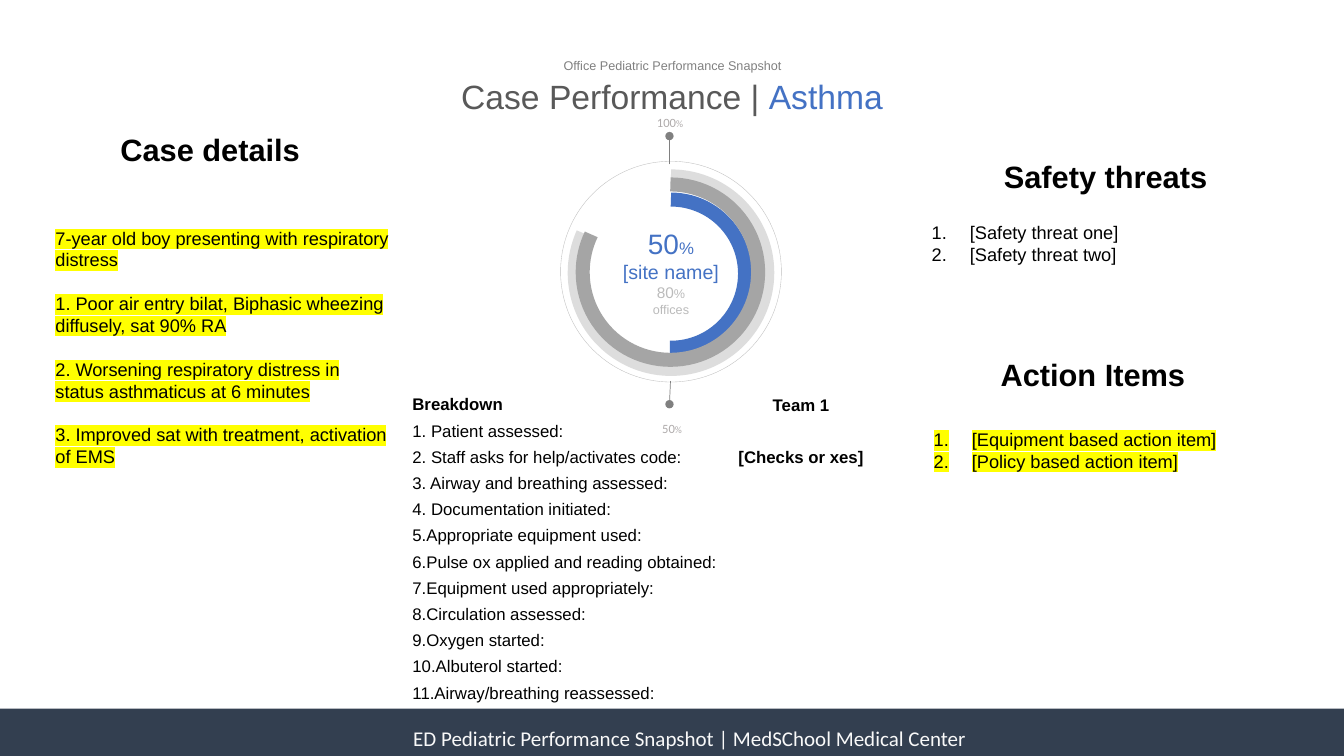
import dataclasses

import lxml.etree
import pptx
import pptx.dml.color
import pptx.enum.shapes
import pptx.enum.text
import pptx.oxml.ns
import pptx.util

Inches = pptx.util.Inches
Pt = pptx.util.Pt
ALIGN = pptx.enum.text.PP_ALIGN
ANCHOR = pptx.enum.text.MSO_ANCHOR
SHAPE = pptx.enum.shapes.MSO_SHAPE


@dataclasses.dataclass(frozen=True)
class Theme:
    font: str = "Arial"
    footer_font: str = "Calibri"
    title: float = 24
    heading: float = 22
    lead: float = 20
    footer: float = 15
    site: float = 14
    text: float = 13
    small: float = 12
    office: float = 11
    label: float = 9
    tiny: float = 7
    ink: str = "000000"
    dark: str = "595959"
    grey: str = "808080"
    accent: str = "4472C4"
    bar: str = "333F50"
    bar_text: str = "F9F9F9"
    ring: str = "BFBFBF"
    track: str = "DDDDDD"
    offices: str = "A5A5A5"
    office_text: str = "BBBBBB"
    scale_text: str = "AFABAB"
    marker: str = "FFFF00"


def rgb(value):
    return pptx.dml.color.RGBColor.from_string(value)


def set_values(target, values):
    for name, value in values.items():
        setattr(target, name, value)


def add_xml(parent, tag, **attributes):
    return lxml.etree.SubElement(parent, pptx.oxml.ns.qn(tag), attributes)


class SlideBuilder:
    def __init__(self, page, theme):
        self.page = page
        self.theme = theme

    def set_text(self, box, paras, align=ALIGN.LEFT, wrap=True, anchor=ANCHOR.TOP, inset=None):
        """Each para is (spans, format values, number indent or None)."""
        frame = box.text_frame
        set_values(frame, {"auto_size": pptx.enum.text.MSO_AUTO_SIZE.NONE,
                           "word_wrap": wrap, "vertical_anchor": anchor})
        if inset is not None:
            set_values(frame, {f"margin_{side}": Inches(inset)
                               for side in ("left", "top", "right", "bottom")})
        for index, (spans, values, indent) in enumerate(paras):
            para = frame.paragraphs[0] if index == 0 else frame.add_paragraph()
            set_values(para, {"alignment": align, "line_spacing": 1.0,
                              "space_before": Pt(0), "space_after": Pt(0), **values})
            self.number(para, indent)
            for span in spans:
                self.span(para, *span)

    def number(self, para, indent):
        props = para._p.get_or_add_pPr()
        offset = Inches(indent or 0)
        props.set("marL", str(offset))
        props.set("indent", str(-offset))
        if indent is None:
            add_xml(props, "a:buNone")
        else:
            add_xml(props, "a:buFont", typeface="+mj-lt")
            add_xml(props, "a:buAutoNum", type="arabicPeriod")

    def span(self, para, text, size, color, bold=False, font=None, marker=None):
        run = para.add_run()
        run.text = text
        set_values(run.font, {"size": Pt(size), "bold": bold, "name": font or self.theme.font})
        run.font.color.rgb = rgb(color)
        if marker:
            highlight = add_xml(run._r.rPr, "a:highlight")
            add_xml(highlight, "a:srgbClr", val=marker)
            run._r.rPr.find(pptx.oxml.ns.qn("a:solidFill")).addnext(highlight)

    def placeholder(self, index, at, paras, **layout):
        box = self.page.placeholders[index]
        set_values(box, dict(zip(("left", "top", "width", "height"), map(Inches, at))))
        self.set_text(box, paras, **layout)

    def text(self, at, paras, **layout):
        self.set_text(self.page.shapes.add_textbox(*map(Inches, at)), paras, **layout)

    def heading(self, at, text):
        spans = [(text, self.theme.heading, self.theme.ink, True)]
        self.text(at, [(spans, {}, None)], align=ALIGN.CENTER, wrap=False)

    def shape(self, kind, at, fill=None, line=None, width=0, angles=()):
        shape = self.page.shapes.add_shape(kind, *map(Inches, at))
        shape.shadow.inherit = False
        for index, angle in enumerate(angles):
            shape.adjustments[index] = angle
        if fill:
            shape.fill.solid()
            shape.fill.fore_color.rgb = rgb(fill)
        else:
            shape.fill.background()
        if line:
            shape.line.color.rgb = rgb(line)
            shape.line.width = Pt(width)
        else:
            shape.line.fill.background()
        return shape

    def pin(self, start, end):
        pin = self.page.shapes.add_connector(
            pptx.enum.shapes.MSO_CONNECTOR.STRAIGHT, *map(Inches, start + end))
        pin.line.color.rgb = rgb(self.theme.grey)
        pin.line.width = Pt(0.5)
        props = pin._element.spPr
        add_xml(props.find(pptx.oxml.ns.qn("a:ln")), "a:tailEnd", type="oval")
        add_xml(props, "a:effectLst")

    def scale_label(self, at, number):
        style = (self.theme.scale_text, False, self.theme.footer_font)
        spans = [(number, self.theme.label, *style), ("%", self.theme.tiny, *style)]
        self.text(at, [(spans, {}, None)], align=ALIGN.CENTER, anchor=ANCHOR.MIDDLE, inset=0)


def main():
    theme = Theme()
    deck = pptx.Presentation()
    deck.slide_width, deck.slide_height = Inches(13.33), Inches(7.5)
    page = deck.slides.add_slide(deck.slide_layouts.get_by_name("Comparison"))
    build = SlideBuilder(page, theme)

    # Footer bar
    build.shape(SHAPE.RECTANGLE, (0, 7.03, 13.33, 0.47), fill=theme.bar)
    footer = ("ED Pediatric Performance Snapshot | MedSChool Medical Center",
              theme.footer, theme.bar_text, False, theme.footer_font)
    build.text((4, 7.15, 6.33, 0.35), [([footer], {}, None)], wrap=False)

    # Title
    title = [("Case Performance | ", theme.title, theme.dark),
             ("Asthma", theme.title, theme.accent)]
    build.placeholder(0, (4.46, 0.7, 4.41, 0.5), [(title, {}, None)],
                      align=ALIGN.CENTER, wrap=False)
    kicker = ("Office Pediatric Performance Snapshot", theme.label, theme.grey)
    build.text((5.48, 0.53, 2.38, 0.25), [([kicker], {}, None)],
               align=ALIGN.CENTER, wrap=False)

    # Performance dial: 12 o'clock start, sweep ends in units of 100000
    for at, end, color in (((5.92, 1.98, 1.47, 1.47), 54.54, theme.accent),
                           ((5.7, 1.75, 1.91, 1.91), 122.57, theme.track),
                           ((5.78, 1.83, 1.74, 1.74), 123.3, theme.offices)):
        build.shape(SHAPE.ARC, at, line=color, width=10, angles=(162, end))
    dial = build.shape(SHAPE.OVAL, (5.56, 1.6, 2.19, 2.19), line=theme.ring, width=0.25)
    readings = [
        [("50", theme.lead, theme.accent), ("%", theme.small, theme.accent)],
        [("[site name]", theme.site, theme.accent)],
        [("80", theme.office, theme.office_text), ("%", theme.label, theme.office_text)],
        [("offices", theme.label, theme.office_text)],
    ]
    build.set_text(dial, [(spans, {}, None) for spans in readings],
                   align=ALIGN.CENTER, anchor=ANCHOR.MIDDLE)
    build.pin((6.64, 1.63), (6.64, 1.35))
    build.pin((6.65, 3.78), (6.64, 4.01))
    build.scale_label((6.32, 1.05, 0.65, 0.34), "100")
    build.scale_label((6.34, 4.08, 0.65, 0.34), "50")

    # Breakdown and team result
    steps = [" Patient assessed:", " Staff asks for help/activates code:",
             " Airway and breathing assessed:", " Documentation initiated:",
             "Appropriate equipment used:", "Pulse ox applied and reading obtained:",
             "Equipment used appropriately:", "Circulation assessed:",
             "Oxygen started:", "Albuterol started:", "Airway/breathing reassessed:"]
    loose = {"line_spacing": 1.3}
    paras = [([("Breakdown", theme.small, theme.ink, True)], {}, None)]
    paras += [([(step, theme.small, theme.ink)], loose, 0) for step in steps]
    build.placeholder(2, (3.99, 3.86, 4.5, 3.45), paras)
    paras = [([(text, theme.small, theme.ink, True)],
              {**loose, "space_before": Pt(gap)}, None)
             for text, gap in (("Team 1", 0), ("[Checks or xes]", 18.6))]
    build.text((7.04, 3.81, 1.81, 0.86), paras, align=ALIGN.CENTER)

    # Case details
    build.heading((1.08, 1.25, 2.01, 0.47), "Case details")
    details = ["7-year old boy presenting with respiratory distress",
               " Poor air entry bilat, Biphasic wheezing diffusely, sat 90% RA",
               " Worsening respiratory distress in status asthmaticus at 6 minutes",
               " Improved sat with treatment, activation of EMS"]
    paras = [([(text, theme.text, theme.ink, False, None, theme.marker)],
              {"space_before": Pt(15.6 if index else 0)}, 0 if index else None)
             for index, text in enumerate(details)]
    build.placeholder(1, (0.45, 2.2, 3.54, 2.51), paras)

    # Safety threats and action items
    build.heading((9.84, 1.52, 2.25, 0.47), "Safety threats")
    build.heading((9.69, 3.48, 2.3, 0.47), "Action Items")
    for index, at, marker, items in (
            (3, (9.14, 2.15, 3.95, 0.54), None,
             ["[Safety threat one]", "[Safety threat two]"]),
            (4, (9.16, 4.2, 3.93, 0.54), theme.marker,
             ["[Equipment based action item]", "[Policy based action item]"])):
        build.placeholder(index, at, [
            ([(item, theme.text, theme.ink, False, None, marker)], {}, 0.38)
            for item in items])

    deck.save("out.pptx")


if __name__ == "__main__":
    main()
